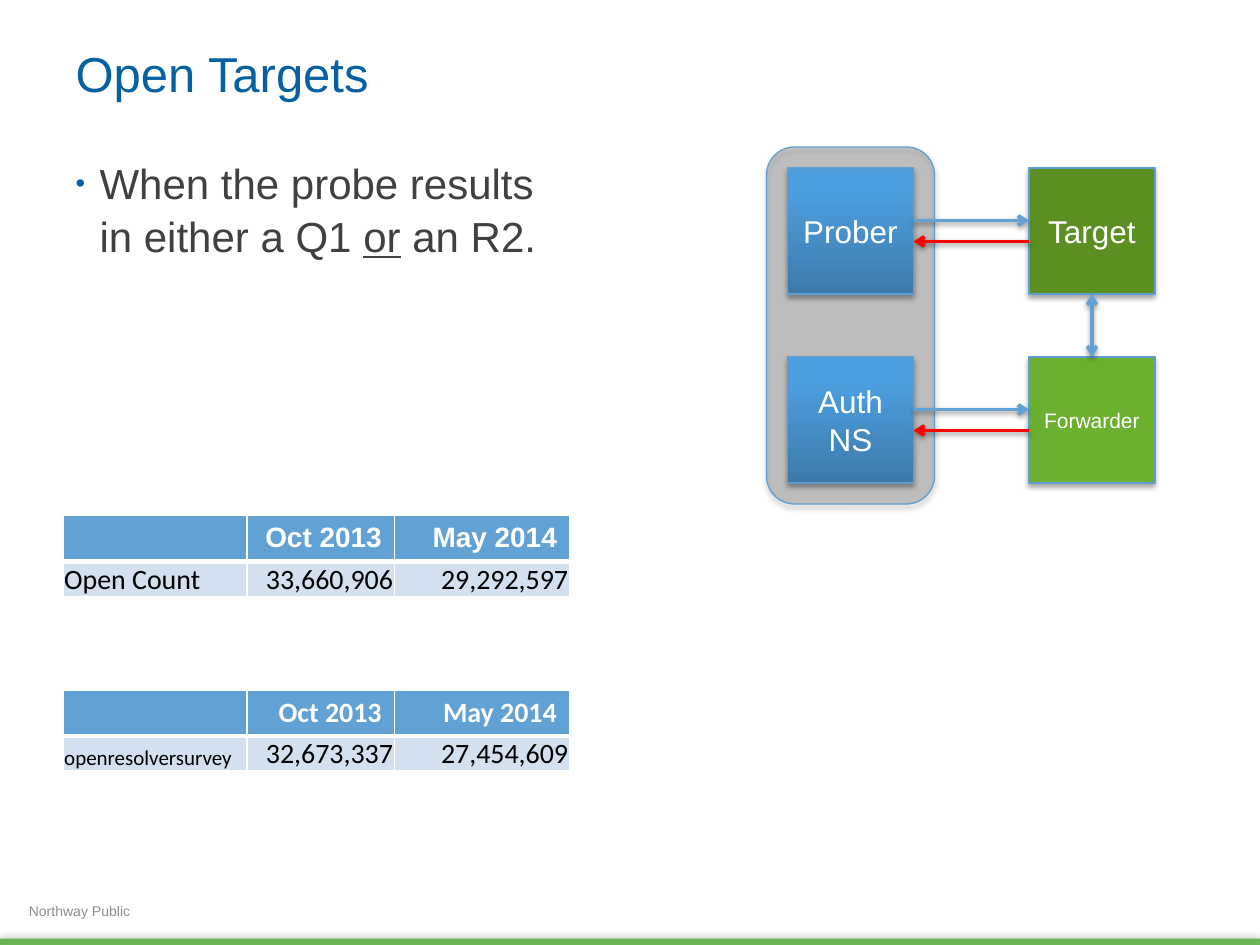
from lxml.etree import SubElement
from pptx import Presentation
from pptx.dml.color import RGBColor
from pptx.enum.shapes import MSO_CONNECTOR, MSO_SHAPE
from pptx.enum.text import MSO_ANCHOR, MSO_AUTO_SIZE, PP_ALIGN
from pptx.oxml import parse_xml
from pptx.oxml.ns import nsdecls, qn
from pptx.util import Inches, Pt

WHITE = RGBColor(0xFF, 0xFF, 0xFF)
BLACK = RGBColor(0x00, 0x00, 0x00)
TITLE_BLUE = RGBColor(0x06, 0x61, 0xA3)
BODY_GRAY = RGBColor(0x40, 0x40, 0x40)
FOOTER_GRAY = RGBColor(0x8C, 0x8C, 0x8C)
BAR_GREEN = RGBColor(0x69, 0xB4, 0x53)
TARGET_GREEN = RGBColor(0x5B, 0x8F, 0x22)
FORWARDER_GREEN = RGBColor(0x6B, 0xB0, 0x2E)
BLUE = RGBColor(0x61, 0xA1, 0xD4)
PALE_BLUE = RGBColor(0xD2, 0xE0, 0xEF)
OUTLINE_BLUE = RGBColor(0x5C, 0x9E, 0xD2)
DARK_BLUE = RGBColor(0x3C, 0x7A, 0xAB)
BRIGHT_BLUE = RGBColor(0x4D, 0x9E, 0xDE)
RED = RGBColor(0xFF, 0x00, 0x00)

UNIT = Inches(10) / 60  # the slide is a grid of 60 columns by 45 rows


def grid(*lengths):
    return [round(length * UNIT) for length in lengths]


def add_text(paragraph, text, size=16, color=WHITE, font="Arial", bold=False,
             underline=False, align=None):
    run = paragraph.add_run()
    run.text = text
    run.font.size = Pt(size)
    run.font.name = font
    run.font.bold = bold
    run.font.underline = underline
    run.font.color.rgb = color
    if align is not None:
        paragraph.alignment = align


def add_shadow(shape, opacity=35, blur=3.1, distance=1.8):
    properties = shape._element.spPr
    for old in properties.findall(qn("a:effectLst")):
        properties.remove(old)
    properties.append(parse_xml(
        f'<a:effectLst {nsdecls("a")}><a:outerShdw blurRad="{Pt(blur)}" '
        f'dist="{Pt(distance)}" dir="5400000" rotWithShape="0"><a:srgbClr val="000000">'
        f'<a:alpha val="{opacity * 1000}"/></a:srgbClr></a:outerShdw></a:effectLst>'))


def place(shape, box):
    shape.left, shape.top, shape.width, shape.height = grid(*box)


def fill_title(slide, box):
    title = slide.shapes.title
    place(title, box)
    frame = title.text_frame
    frame.vertical_anchor = MSO_ANCHOR.MIDDLE
    frame.auto_size = MSO_AUTO_SIZE.NONE
    add_text(frame.paragraphs[0], "Open Targets", size=28, color=TITLE_BLUE,
             align=PP_ALIGN.LEFT)


def fill_body(slide, box):
    body = slide.placeholders[1]
    place(body, box)
    body.text_frame.auto_size = MSO_AUTO_SIZE.NONE
    paragraph = body.text_frame.paragraphs[0]
    paragraph.space_before = Pt(9)
    paragraph.line_spacing = 1.05
    for text, underline in (("When the probe results in either a Q1 ", False),
                            ("or", True), (" an R2.", False)):
        add_text(paragraph, text, size=24, color=BODY_GRAY, underline=underline)
    # Small blue bullet with a hanging indent
    properties = paragraph._p.get_or_add_pPr()
    properties.set("marL", str(Inches(0.19)))
    properties.set("indent", str(-Inches(0.19)))
    bullet_color = SubElement(properties, qn("a:buClr"))
    SubElement(bullet_color, qn("a:srgbClr"), val=str(TITLE_BLUE))
    SubElement(properties, qn("a:buSzPct"), val="65000")
    SubElement(properties, qn("a:buFont"), typeface="Arial")
    SubElement(properties, qn("a:buChar"), char="•")


def add_borders(cell, top, bottom):
    properties = cell._tc.get_or_add_tcPr()
    widths = (("lnL", 1), ("lnR", 1), ("lnT", top), ("lnB", bottom))
    for index, (side, width) in enumerate(widths):
        properties.insert(index, parse_xml(
            f'<a:{side} {nsdecls("a")} w="{Pt(width)}"><a:solidFill>'
            f'<a:srgbClr val="{WHITE}"/></a:solidFill></a:{side}>'))


def add_count_table(slide, box, label, counts, header_font="Arial", label_size=16):
    table = slide.shapes.add_table(2, 3, *grid(*box)).table
    for column, width in zip(table.columns, (1.46, 1.17, 1.39)):
        column.width = Inches(width)
    rows = (("", "Oct 2013", "May 2014"), (label, *counts))
    for row, texts in enumerate(rows):
        table.rows[row].height = Inches(0.23)
        header = row == 0
        for column, text in enumerate(texts):
            cell = table.cell(row, column)
            cell.fill.solid()
            cell.fill.fore_color.rgb = BLUE if header else PALE_BLUE
            add_borders(cell, top=1 if header else 3, bottom=3 if header else 1)
            if not header:
                cell.vertical_anchor = MSO_ANCHOR.BOTTOM
                cell.margin_left = cell.margin_right = cell.margin_top = Inches(0.01)
                cell.margin_bottom = 0
            paragraph = cell.text_frame.paragraphs[0]
            if not text:
                paragraph.font.size = Pt(12)
                continue
            add_text(paragraph, text, size=16 if column else label_size,
                     color=WHITE if header else BLACK,
                     font=header_font if header else "Calibri", bold=header,
                     align=PP_ALIGN.RIGHT if column else PP_ALIGN.LEFT)


def add_node(slide, box, lines, color=None, size=18):
    node = slide.shapes.add_shape(MSO_SHAPE.RECTANGLE, *grid(*box))
    if color is None:
        node.fill.gradient()
        node.fill.gradient_angle = 90
        for stop, (position, shade) in zip(node.fill.gradient_stops,
                                           ((0, DARK_BLUE), (0.8, BRIGHT_BLUE))):
            stop.position = position
            stop.color.rgb = shade
    else:
        node.fill.solid()
        node.fill.fore_color.rgb = color
    node.line.color.rgb = OUTLINE_BLUE
    node.line.width = Pt(0.75)
    add_shadow(node)
    frame = node.text_frame
    frame.vertical_anchor = MSO_ANCHOR.MIDDLE
    for index, text in enumerate(lines):
        paragraph = frame.add_paragraph() if index else frame.paragraphs[0]
        add_text(paragraph, text, size=size, align=PP_ALIGN.CENTER)
    return node


def add_arrow(slide, start, end, color=BLUE, both_ends=False):
    arrow = slide.shapes.add_connector(MSO_CONNECTOR.STRAIGHT, *grid(*start, *end))
    arrow.line.color.rgb = color
    arrow.line.width = Pt(2)
    line = arrow.line._get_or_add_ln()
    for tag in ("a:headEnd", "a:tailEnd") if both_ends else ("a:tailEnd",):
        SubElement(line, qn(tag), type="arrow")
    add_shadow(arrow, opacity=38, distance=1.6)
    return arrow


def add_probe_diagram(slide, box):
    left, top, width, height = box
    side = 6
    near, far = left + 1, left + width - side
    upper, lower = top + 1, top + height - side - 1

    # Panel behind the two measuring machines
    panel = slide.shapes.add_shape(MSO_SHAPE.ROUNDED_RECTANGLE,
                                   *grid(left, top, side + 2, height))
    panel.fill.solid()
    panel.fill.fore_color.rgb = BLACK
    color = panel._element.spPr.find(qn("a:solidFill"))[0]
    SubElement(color, qn("a:alpha"), val="20000")
    panel.line.color.rgb = OUTLINE_BLUE
    panel.line.width = Pt(0.75)
    add_shadow(panel)

    add_node(slide, (near, upper, side, side), ["Prober"])
    add_node(slide, (near, lower, side, side), ["Auth", "NS"])
    target = add_node(slide, (far, upper, side, side), ["Target"], TARGET_GREEN)
    forwarder = add_node(slide, (far, lower, side, side), ["Forwarder"],
                         FORWARDER_GREEN, size=12)

    # Query and response arrows in each row
    for row in (upper, lower):
        query, response = row + 2.5, row + 3.5
        add_arrow(slide, (near + side, query), (far, query))
        add_arrow(slide, (far, response), (near + side, response), RED)
    middle = far + side / 2
    link = add_arrow(slide, (middle, upper + side), (middle, lower), both_ends=True)
    link.begin_connect(target, 2)
    link.end_connect(forwarder, 0)


def add_footer(slide, box):
    left, top, width, height = box
    bar = slide.shapes.add_shape(MSO_SHAPE.RECTANGLE,
                                 *grid(left, top + height - 0.3, width, 0.3))
    bar.fill.solid()
    bar.fill.fore_color.rgb = BAR_GREEN
    bar.line.fill.background()
    add_shadow(bar, opacity=40, blur=5, distance=0)
    label = slide.shapes.add_textbox(*grid(left + 0.78, top, 20, 1.2))
    label.text_frame.word_wrap = True
    label.text_frame.vertical_anchor = MSO_ANCHOR.MIDDLE
    add_text(label.text_frame.paragraphs[0], "Northway Public", size=8, color=FOOTER_GRAY)


def main():
    presentation = Presentation()
    presentation.slide_width, presentation.slide_height = grid(60, 45)
    slide = presentation.slides.add_slide(presentation.slide_layouts[1])
    add_footer(slide, (0, 42.8, 60, 2.2))
    fill_title(slide, (3, 1.6, 54, 3.7))
    fill_body(slide, (3, 7.1, 24.1, 34.5))
    add_count_table(slide, (3, 24.55, 24.1, 3.9), "Open Count",
                    ("33,660,906", "29,292,597"))
    add_count_table(slide, (3, 32.85, 24.1, 3.9), "openresolversurvey",
                    ("32,673,337", "27,454,609"), header_font="Calibri", label_size=12)
    add_probe_diagram(slide, (36.5, 7, 18.5, 17))
    presentation.save("out.pptx")


if __name__ == "__main__":
    main()
